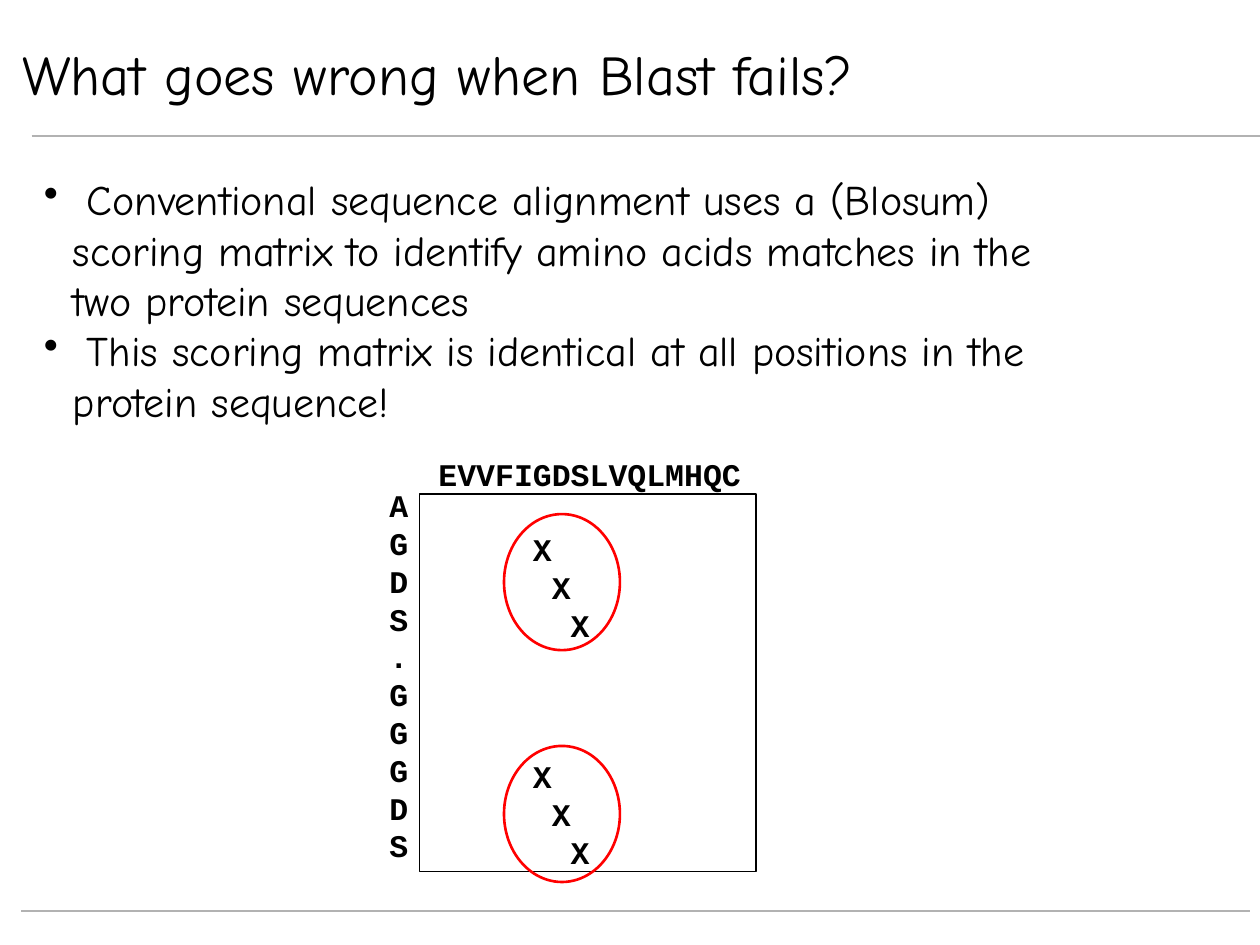
"""Build the slide on why a Blast search fails, with its dot-matrix alignment."""
from pptx import Presentation
from pptx import util as u
from pptx.dml.color import RGBColor
from pptx.enum import shapes, text
from pptx.oxml.xmlchemy import OxmlElement

COLORS = {"ink": "000000", "rule": "B2B2B2", "match": "FF0000", "paper": "FFFFFF"}
PROSE, MONO = "Comic Neue", "Courier New"
CELL_WIDTH, ROW_PITCH = 0.15, 21.6
QUERY, SUBJECT = "EVVFIGDSLVQLMHQC", "AGDS.GGGDS"
MATCH_COLUMNS = (5, 6, 7)
BULLETS = (
    " Conventional sequence alignment uses a (Blosum) scoring matrix to identify "
    "amino acids matches in the two protein sequences",
    " This scoring matrix is identical at all positions in the protein sequence!",
)


def rgb(name):
    return RGBColor.from_string(COLORS[name])


def add_rule(slide, left, top, width):
    rule = slide.shapes.add_connector(
        shapes.MSO_CONNECTOR.STRAIGHT,
        u.Inches(left), u.Inches(top), u.Inches(left + width), u.Inches(top))
    rule.line.color.rgb = rgb("rule")
    rule.line.width = u.Pt(1.5)
    rule._element.spPr.append(OxmlElement("a:effectLst"))


def add_outline(slide, kind, box, color, weight, fill=None):
    outline = slide.shapes.add_shape(kind, *map(u.Inches, box))
    outline.shadow.inherit = False
    if fill:
        outline.fill.solid()
        outline.fill.fore_color.rgb = rgb(fill)
    else:
        outline.fill.background()
    outline.line.color.rgb = rgb(color)
    outline.line.width = u.Pt(weight)
    return outline


def add_frame(slide, box, wrap=True, inset=True):
    frame = slide.shapes.add_textbox(*map(u.Inches, box)).text_frame
    frame.word_wrap = wrap
    if not inset:
        frame.margin_left = frame.margin_right = 0
        frame.margin_top = frame.margin_bottom = 0
    return frame


def write_lines(frame, lines, font, size, bold=False, pitch=None):
    frame.text = "\n".join(lines)
    for paragraph in frame.paragraphs:
        paragraph.alignment = text.PP_ALIGN.LEFT
        if pitch:
            paragraph.line_spacing = u.Pt(pitch)
        for run in paragraph.runs:
            run.font.name = font
            run.font.size = u.Pt(size)
            run.font.bold = bold
            run.font.color.rgb = rgb("ink")


def indent(paragraph, margin, hanging=0):
    properties = paragraph._p.get_or_add_pPr()
    properties.set("marL", str(u.Inches(margin)))
    properties.set("indent", str(-u.Inches(hanging)))
    return properties


def add_title(slide):
    title = add_outline(slide, shapes.MSO_SHAPE.RECTANGLE,
                        (0.08, 0.33, 7.83, 0.5), "paper", 0.75, "paper")
    title.text_frame.vertical_anchor = text.MSO_ANCHOR.MIDDLE
    write_lines(title.text_frame, ["What goes wrong when Blast fails?"], PROSE, 32)


def add_bullets(slide):
    frame = add_frame(slide, (0.25, 1.33, 8.25, 2.1))
    write_lines(frame, BULLETS, PROSE, 24, pitch=28.8)
    for paragraph in frame.paragraphs:
        bullet = OxmlElement("a:buChar")
        bullet.set("char", "•")
        indent(paragraph, 0.23, 0.23).append(bullet)


def add_alignment(slide):
    query = add_frame(slide, (3.48, 3.61, 2.4, 3.3), wrap=False, inset=False)
    write_lines(query, [QUERY] + ["X"] * 2 * len(MATCH_COLUMNS),
                MONO, 18, True, ROW_PITCH)
    matches = query.paragraphs[1:]
    for match, column in zip(matches, MATCH_COLUMNS * 2):
        indent(match, column * CELL_WIDTH)
    matches[0].space_before = u.Pt(ROW_PITCH)
    matches[len(MATCH_COLUMNS)].space_before = u.Pt(3 * ROW_PITCH)

    subject = add_frame(slide, (3.09, 3.86, 0.2, 3), inset=False)
    write_lines(subject, [SUBJECT], MONO, 18, True, ROW_PITCH)

    add_outline(slide, shapes.MSO_SHAPE.RECTANGLE, (3.33, 3.92, 2.67, 3), "ink", 0.75)
    for top in (4.08, 5.92):
        add_outline(slide, shapes.MSO_SHAPE.OVAL, (4, top, 0.92, 1.08), "match", 1.5)


def main():
    deck = Presentation()
    deck.slide_width, deck.slide_height = u.Inches(10), u.Inches(7.5)
    slide = deck.slides.add_slide(deck.slide_layouts[6])
    add_rule(slide, 0.25, 1.08, 9.75)
    add_rule(slide, 0.17, 7.23, 9.75)
    add_title(slide)
    add_bullets(slide)
    add_alignment(slide)
    deck.save("out.pptx")


if __name__ == "__main__":
    main()
